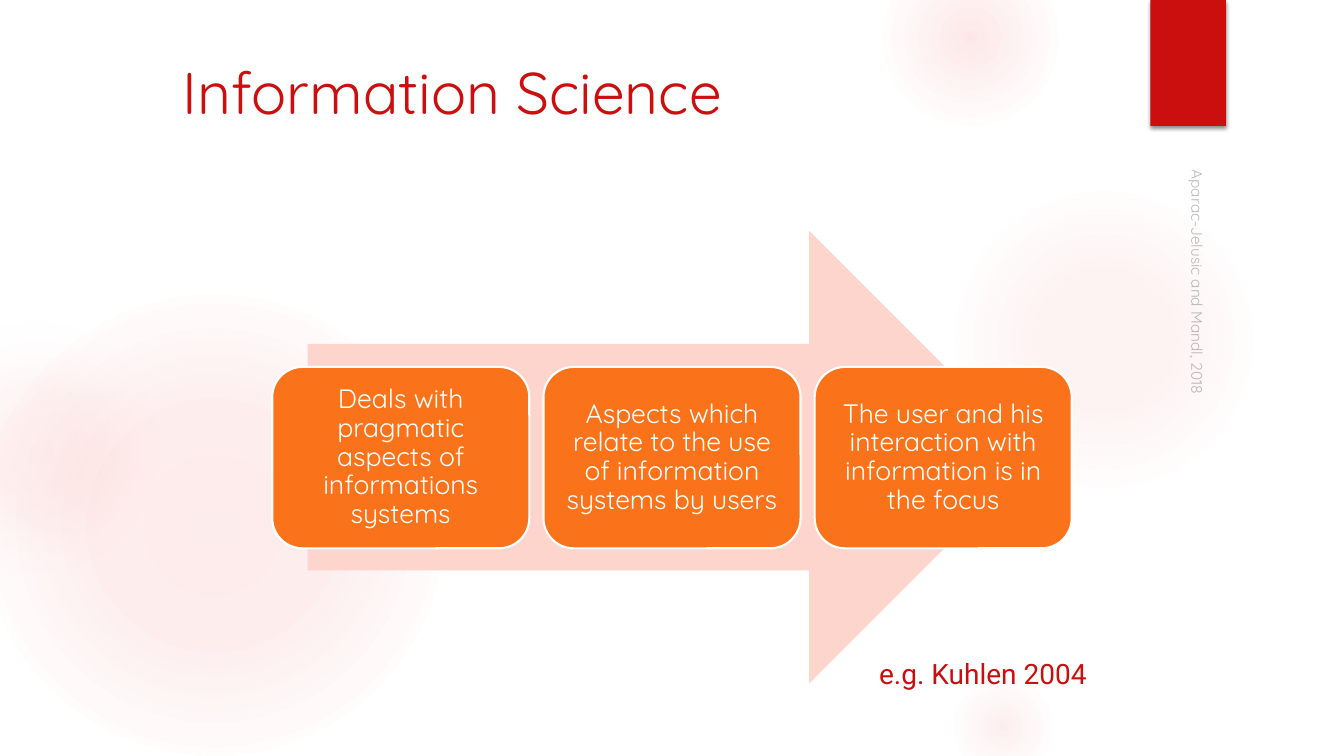
from dataclasses import dataclass

from pptx import Presentation
from pptx.dml.color import RGBColor
from pptx.enum.shapes import MSO_SHAPE
from pptx.enum.text import MSO_ANCHOR, PP_ALIGN
from pptx.oxml import parse_xml
from pptx.oxml.ns import nsdecls, qn
from pptx.util import Inches, Pt

ELLIPSE, RECT = MSO_SHAPE.OVAL, MSO_SHAPE.RECTANGLE
ARROW, ROUNDED = MSO_SHAPE.RIGHT_ARROW, MSO_SHAPE.ROUNDED_RECTANGLE
MIDDLE, BOTTOM = MSO_ANCHOR.MIDDLE, MSO_ANCHOR.BOTTOM
CENTER = PP_ALIGN.CENTER


@dataclass(frozen=True)
class Theme:
    red: str = "CB0F0F"
    orange: str = "FA731A"
    pale: str = "FDD5CD"
    white: str = "FFFFFF"
    grey: str = "8C8C8C"
    glow: str = "F35C5C"
    glow_edge: str = "F3F3F3"
    font: str = "Quicksand"
    source_font: str = "Roboto"
    title_size: int = 42
    source_size: int = 20
    step_size: int = 19
    credit_size: int = 11


theme = Theme()

prs = Presentation()
prs.slide_width, prs.slide_height = Inches(13.33), Inches(7.5)
slide = prs.slides.add_slide(prs.slide_layouts[6])


def add_shape(kind, left, top, width, height, color=None):
    """Add a shape without line or shadow; no color means no fill."""
    s = slide.shapes.add_shape(kind, Inches(left), Inches(top), Inches(width), Inches(height))
    s.shadow.inherit = False
    s.line.fill.background()
    if color:
        s.fill.solid()
        s.fill.fore_color.rgb = RGBColor.from_string(color)
    else:
        s.fill.background()
    return s


def set_text(s, text, size, color, font=theme.font):
    p = s.text_frame.paragraphs[0]
    p.text = text
    p.font.name = font
    p.font.size = Pt(size)
    p.font.color.rgb = RGBColor.from_string(color)
    return p


# Soft background glows: left, top, diameter, (position %, opacity %) stops, edge color
glows = [
    (-0.17, 2.92, 4.58, [(0, 11), (36, 10), (75, 0)], theme.glow),
    (-0.92, 3.17, 2.58, [(0, 8), (36, 5), (71, 0)], theme.glow_edge),
    (9.41, 1.83, 3.08, [(0, 7), (36, 6), (69, 0)], theme.glow),
    (8.75, -0.5, 1.75, [(0, 14), (36, 7), (73, 0)], theme.glow),
    (9.41, 6.67, 1.08, [(0, 10), (31, 5), (66, 0)], theme.glow),
]
for left, top, diameter, stops, edge in glows:
    s = add_shape(ELLIPSE, left, top, diameter, diameter)
    colors = [theme.glow, theme.glow, edge]
    gs = "".join(
        f'<a:gs pos="{pos * 1000}"><a:srgbClr val="{color}">'
        f'<a:alpha val="{alpha * 1000}"/></a:srgbClr></a:gs>'
        for (pos, alpha), color in zip(stops, colors)
    )
    gradient = parse_xml(
        f'<a:gradFill {nsdecls("a")}><a:gsLst>{gs}</a:gsLst><a:path path="circle">'
        '<a:fillToRect l="50000" t="50000" r="50000" b="50000"/></a:path></a:gradFill>'
    )
    spPr = s.element.spPr
    spPr.replace(spPr.find(qn("a:noFill")), gradient)

# Red tab at the top edge, with a soft shadow
tab = add_shape(RECT, 11.41, 0, 0.75, 1.25, theme.red)
tab.element.spPr.find(qn("a:effectLst")).append(parse_xml(
    f'<a:outerShdw {nsdecls("a")} blurRad="{Pt(3)}" dist="{Pt(2)}" dir="5400000" rotWithShape="0">'
    '<a:srgbClr val="000000"><a:alpha val="45000"/></a:srgbClr></a:outerShdw>'
))

# Title
title = slide.shapes.add_textbox(Inches(0.71), Inches(0.5), Inches(10.29), Inches(1.53))
title.text_frame.word_wrap = True
title.text_frame.margin_left = Inches(1.1)
set_text(title, "Information Science", theme.title_size, theme.red)

# Arrow with three steps
add_shape(ARROW, 3.05, 2.29, 7.22, 4.49, theme.pale)
steps = [
    "Deals with pragmatic aspects of informations systems",
    "Aspects which relate to the use of information systems by users",
    "The user and his interaction with information is in the focus",
]
for i, text in enumerate(steps):
    s = add_shape(ROUNDED, 2.7 + i * 2.69, 3.64, 2.55, 1.8, theme.orange)
    s.line.color.rgb = RGBColor.from_string(theme.white)
    s.line.width = Pt(1.5)
    tf = s.text_frame
    tf.word_wrap = True
    tf.vertical_anchor = MIDDLE
    tf.margin_left = tf.margin_right = tf.margin_top = tf.margin_bottom = Inches(0.08)
    p = set_text(s, text, theme.step_size, theme.white)
    p.alignment = CENTER
    p.line_spacing = 0.9

# Source
source = slide.shapes.add_textbox(Inches(8.62), Inches(6.46), Inches(2.3), Inches(0.44))
set_text(source, "e.g. Kuhlen 2004", theme.source_size, theme.red, theme.source_font)

# Vertical credit
credit = slide.shapes.add_textbox(Inches(9.79), Inches(3.53), Inches(4.22), Inches(0.33))
credit.rotation = 90
credit.text_frame.word_wrap = True
credit.text_frame.vertical_anchor = BOTTOM
p = set_text(credit, "Aparac-Jelusic and Mandl, 2018", theme.credit_size, theme.grey)
for color in p._p.iter(qn("a:srgbClr")):
    color.append(parse_xml(f'<a:alpha {nsdecls("a")} val="60000"/>'))

prs.save("out.pptx")
